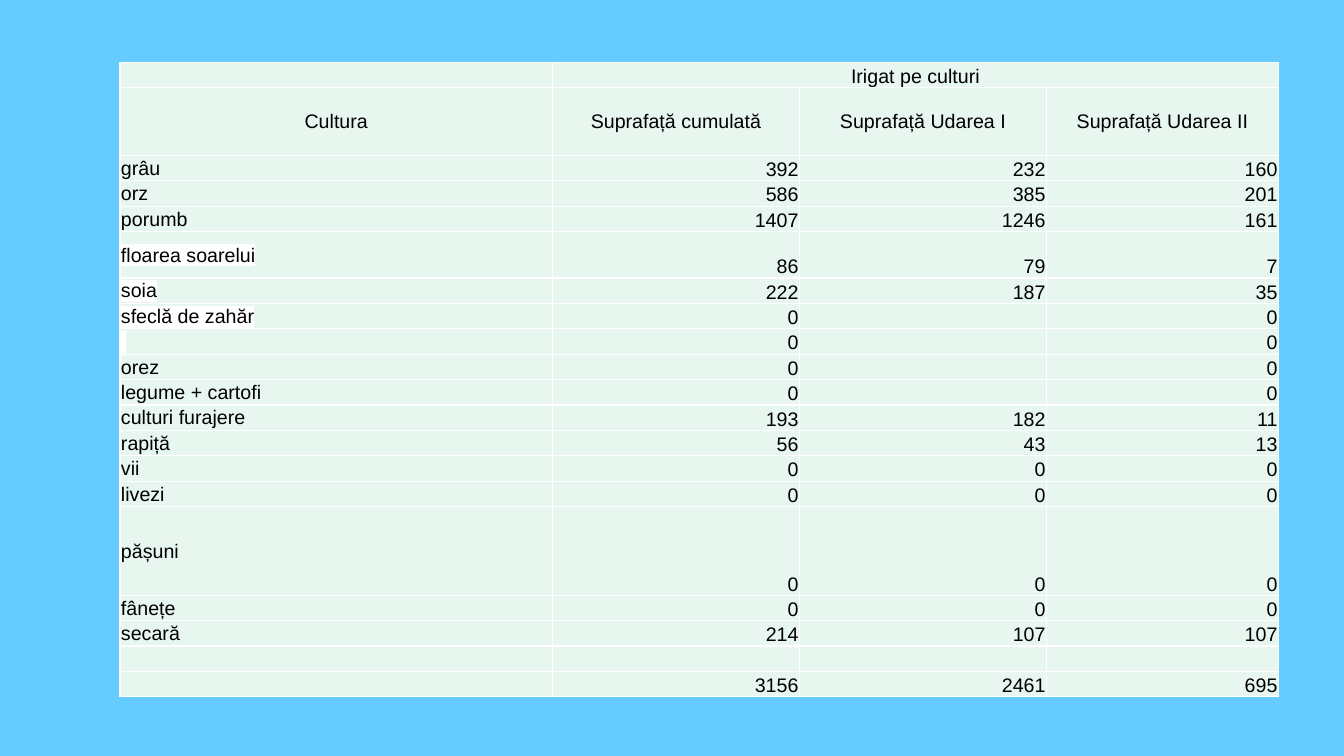
from lxml.etree import SubElement
from pptx import Presentation
from pptx.dml.color import RGBColor
from pptx.enum.text import MSO_ANCHOR, PP_ALIGN
from pptx.oxml.ns import qn
from pptx.util import Inches, Pt

SKY = RGBColor(0x66, 0xCC, 0xFF)
MINT = RGBColor(0xE7, 0xF6, 0xEF)
WHITE = RGBColor(0xFF, 0xFF, 0xFF)
BLACK = RGBColor(0, 0, 0)

TABLE_HEIGHT = 6.3
COLUMN_WIDTHS = [4.29, 2.45, 2.45, 2.3]
TALL_ROWS = {1: 0.67, 5: 0.46, 15: 0.88}
HIGHLIGHTED_ROWS = range(5, 9)
HEADER_ROWS = 2

ROWS = [
    ("", "Irigat pe culturi", "", ""),
    ("Cultura", "Suprafață cumulată", "Suprafață Udarea I", "Suprafață Udarea II"),
    ("grâu", "392", "232", "160"),
    ("orz", "586", "385", "201"),
    ("porumb", "1407", "1246", "161"),
    ("floarea soarelui", "86", "79", "7"),
    ("soia", "222", "187", "35"),
    ("sfeclă de zahăr", "0", "", "0"),
    (" ", "0", "", "0"),
    ("orez", "0", "", "0"),
    ("legume + cartofi", "0", "", "0"),
    ("culturi furajere", "193", "182", "11"),
    ("rapiță", "56", "43", "13"),
    ("vii", "0", "0", "0"),
    ("livezi", "0", "0", "0"),
    ("pășuni", "0", "0", "0"),
    ("fânețe", "0", "0", "0"),
    ("secară", "214", "107", "107"),
    ("", "", "", ""),
    ("", "3156", "2461", "695"),
]


def add_solid_fill(parent, tag, color):
    SubElement(SubElement(parent, qn(tag)), qn("a:srgbClr"), val=str(color))


def set_borders(cell):
    properties = cell._tc.get_or_add_tcPr()
    for side in ("a:lnL", "a:lnR", "a:lnT", "a:lnB"):
        line = SubElement(properties, qn(side), w=str(Pt(1)))
        add_solid_fill(line, "a:solidFill", WHITE)


def write_cell(cell, text, align, anchor):
    set_borders(cell)
    cell.fill.solid()
    cell.fill.fore_color.rgb = MINT
    cell.margin_left = cell.margin_right = cell.margin_top = Inches(0.01)
    cell.margin_bottom = 0
    cell.vertical_anchor = anchor
    paragraph = cell.text_frame.paragraphs[0]
    paragraph.alignment = align
    paragraph.font.name = "Arial"
    paragraph.font.size = Pt(14)
    paragraph.font.color.rgb = BLACK
    if text:
        paragraph.add_run().text = text
    else:
        # An empty cell takes its line height from the paragraph end mark.
        SubElement(paragraph._p, qn("a:endParaRPr"), sz="1400")


def highlight(cell):
    for span in cell.text_frame.paragraphs[0].runs:
        add_solid_fill(span.font._element, "a:highlight", WHITE)


def cell_layout(row, column):
    """Return the alignment and anchor for a position in the table."""
    if row < HEADER_ROWS:
        return PP_ALIGN.CENTER, MSO_ANCHOR.MIDDLE if row else MSO_ANCHOR.BOTTOM
    if column == 0:
        return PP_ALIGN.LEFT, MSO_ANCHOR.MIDDLE
    return PP_ALIGN.RIGHT, MSO_ANCHOR.BOTTOM


def add_crop_table(page):
    frame = page.shapes.add_table(
        len(ROWS), len(COLUMN_WIDTHS), Inches(1.19), Inches(0.62),
        Inches(sum(COLUMN_WIDTHS)), Inches(TABLE_HEIGHT))
    table = frame.table
    table.first_row = table.horz_banding = False
    for column, width in zip(table.columns, COLUMN_WIDTHS):
        column.width = Inches(width)
    plain_height = (TABLE_HEIGHT - sum(TALL_ROWS.values())) / (len(ROWS) - len(TALL_ROWS))
    for row, texts in enumerate(ROWS):
        table.rows[row].height = Inches(TALL_ROWS.get(row, plain_height))
        for column, text in enumerate(texts):
            write_cell(table.cell(row, column), text, *cell_layout(row, column))
    table.cell(0, 1).merge(table.cell(0, 3))
    for row in HIGHLIGHTED_ROWS:
        highlight(table.cell(row, 0))


def main():
    deck = Presentation()
    deck.slide_width = Inches(13.33)
    deck.slide_height = Inches(7.5)
    page = deck.slides.add_slide(deck.slide_layouts[6])
    page.background.fill.solid()
    page.background.fill.fore_color.rgb = SKY
    add_crop_table(page)
    deck.save("out.pptx")


if __name__ == "__main__":
    main()
